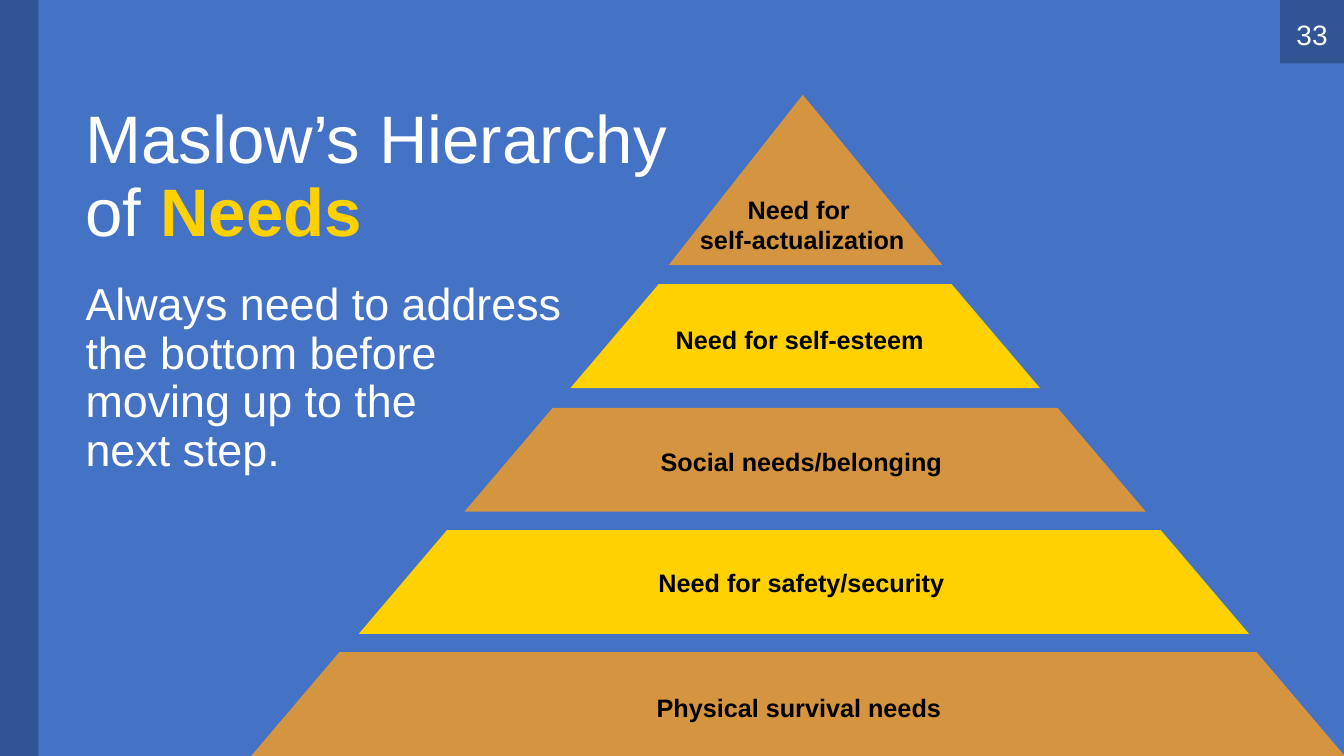
from dataclasses import dataclass

from lxml.etree import SubElement
from pptx import Presentation
from pptx.dml.color import RGBColor
from pptx.enum.shapes import MSO_SHAPE as Preset
from pptx.enum.text import MSO_ANCHOR as Anchor, PP_ALIGN as Align
from pptx.oxml.ns import qn
from pptx.shapes.autoshape import Shape
from pptx.slide import Slide
from pptx.util import Emu, Inches, Pt

COLORS = {
    "blue": "4472C4",
    "navy": "203864",
    "ochre": "D59440",
    "gold": "FFD100",
    "white": "FFFFFF",
    "black": "000000",
}
FONT = "Arial"
WIDTH, HEIGHT = Inches(13.33), Inches(7.5)
COLUMN, ROW = WIDTH / 160, HEIGHT / 90
LABEL_COLUMNS = 36.6


@dataclass(frozen=True)
class Area:
    """A rectangle in grid columns and rows."""

    left: float
    top: float
    width: float
    height: float

    def lengths(self) -> tuple[Emu, Emu, Emu, Emu]:
        """Return left, top, width and height as lengths."""
        return (
            Emu(round(self.left * COLUMN)),
            Emu(round(self.top * ROW)),
            Emu(round(self.width * COLUMN)),
            Emu(round(self.height * ROW)),
        )


@dataclass(frozen=True)
class Tier:
    """One level of the pyramid with the centre of its label."""

    label: str
    area: Area
    center: float
    middle: float
    color: str
    preset: Preset = Preset.TRAPEZOID
    adjustment: float = 0.85
    label_rows: float = 4.8


TIERS = [
    Tier("Physical survival needs", Area(29.9, 77.64, 130.2, 12.36), 95.1, 84.24, "ochre"),
    Tier("Need for safety/security", Area(42.7, 63.12, 106, 12.36), 95.4, 69.36, "gold"),
    Tier("Social needs/belonging", Area(55.3, 48.55, 81.1, 12.36), 95.4, 54.96, "ochre"),
    Tier("Need for self-esteem", Area(67.9, 33.84, 55.9, 12.36), 95.2, 40.44, "gold"),
    Tier("Need for \vself-actualization", Area(79.6, 11.28, 32.6, 20.28), 95.5, 26.7,
         "ochre", Preset.ISOSCELES_TRIANGLE, 0.49, 7.3),
]
SIDEBAR = Area(0, 0, 4.56, 90)
BADGE = Area(152.4, 0, 7.6, 7.56)
NUMBER = Area(152.4, 1.68, 7.6, 4.8)
TITLE = Area(9, 12, 72, 30)
BODY = Area(9, 33, 60, 36)


def draw_shape(page: Slide, preset: Preset, area: Area, color: str) -> Shape:
    """Draw a filled preset shape without outline or shadow."""
    shape = page.shapes.add_shape(preset, *area.lengths())
    shape.shadow.inherit = False
    shape.fill.solid()
    shape.fill.fore_color.rgb = RGBColor.from_string(COLORS[color])
    shape.line.fill.background()
    return shape


def draw_panel(page: Slide, area: Area) -> None:
    """Draw a half-transparent navy rectangle."""
    panel = draw_shape(page, Preset.RECTANGLE, area, "navy")
    tint = next(panel.fill._xPr.iter(qn("a:srgbClr")))
    SubElement(tint, qn("a:alpha")).set("val", "50000")


def draw_text(page: Slide, area: Area, text: str, size: float, color: str,
              bold: bool = False, align: Align = Align.LEFT,
              anchor: Anchor = Anchor.TOP, wrap: bool = True) -> Shape:
    """Draw a one-paragraph text box."""
    box = page.shapes.add_textbox(*area.lengths())
    frame = box.text_frame
    frame.text = text
    frame.word_wrap = wrap
    frame.vertical_anchor = anchor
    para = frame.paragraphs[0]
    para.alignment = align
    for span in para.runs:
        span.font.name = FONT
        span.font.size = Pt(size)
        span.font.bold = bold
        span.font.color.rgb = RGBColor.from_string(COLORS[color])
    return box


def draw_heading(page: Slide) -> None:
    """Draw the title with its highlighted word and the text below it."""
    title = draw_text(page, TITLE, "Maslow’s Hierarchy of ", 48, "white")
    span = title.text_frame.paragraphs[0].add_run()
    span.text = "Needs"
    span.font.name = FONT
    span.font.size = Pt(48)
    span.font.bold = True
    span.font.color.rgb = RGBColor.from_string(COLORS["gold"])
    body = draw_text(
        page, BODY,
        "Always need to address the bottom before\vmoving up to the\vnext step.",
        32, "white")
    for box in (title, body):
        box.text_frame.paragraphs[0].line_spacing = 0.9


def draw_tier(page: Slide, tier: Tier) -> None:
    """Draw one pyramid level and its centred label."""
    level = draw_shape(page, tier.preset, tier.area, tier.color)
    level.adjustments[0] = tier.adjustment
    area = Area(tier.center - LABEL_COLUMNS / 2, tier.middle - tier.label_rows / 2,
                LABEL_COLUMNS, tier.label_rows)
    label = draw_text(page, area, tier.label, 18, "black", True,
                      Align.CENTER, Anchor.MIDDLE, False)
    frame = label.text_frame
    frame.margin_left = frame.margin_right = 0
    frame.margin_top = frame.margin_bottom = 0


def main() -> None:
    """Build the slide and save the deck."""
    deck = Presentation()
    deck.slide_width, deck.slide_height = WIDTH, HEIGHT
    page = deck.slides.add_slide(deck.slide_layouts[6])
    page.background.fill.solid()
    page.background.fill.fore_color.rgb = RGBColor.from_string(COLORS["blue"])
    for area in (BADGE, SIDEBAR):
        draw_panel(page, area)
    draw_heading(page)
    for tier in TIERS:
        draw_tier(page, tier)
    draw_text(page, NUMBER, "33", 20, "white", align=Align.CENTER, anchor=Anchor.MIDDLE)
    deck.save("out.pptx")


if __name__ == "__main__":
    main()
